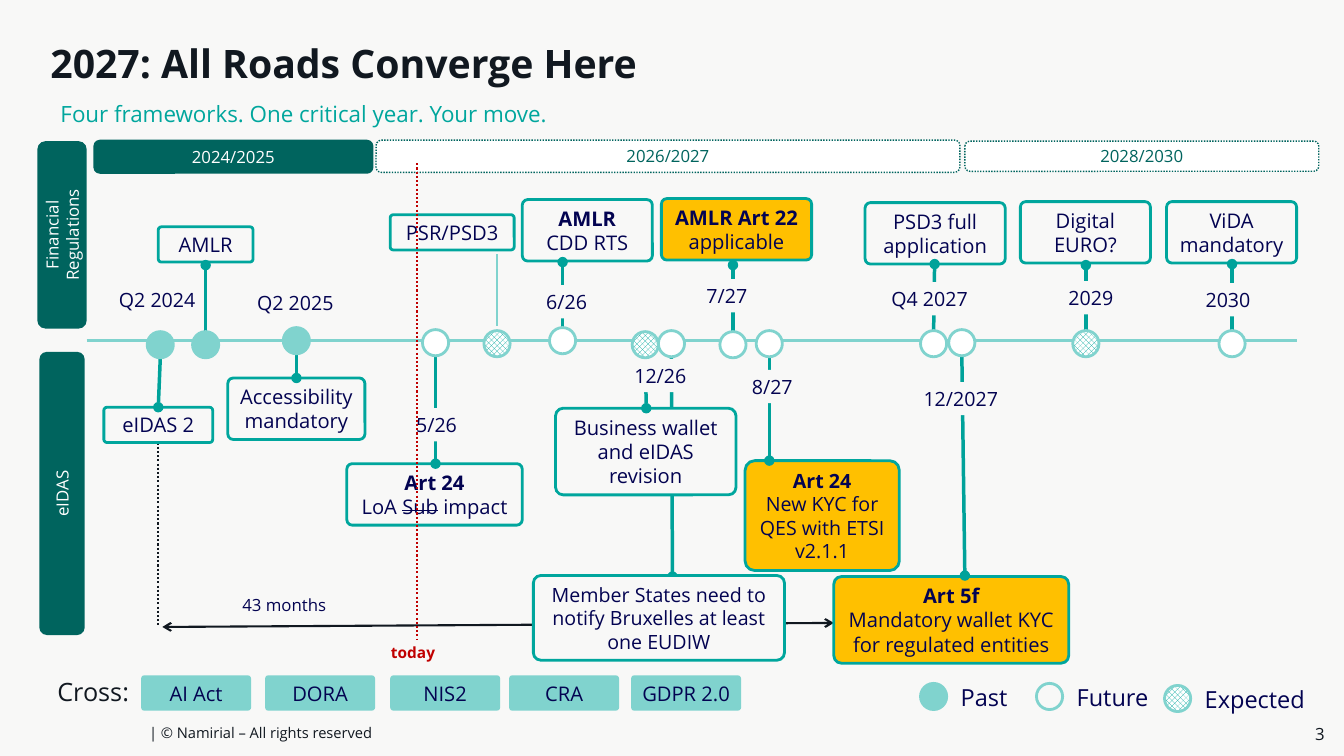
from collections import namedtuple
from dataclasses import dataclass

from lxml import etree
from pptx import Presentation
from pptx import util as u
from pptx.dml.color import RGBColor
from pptx.enum import dml, shapes, text
from pptx.oxml.ns import qn


@dataclass(frozen=True)
class Theme:
    font: str = "Open Sans"
    paper: str = "F8F8F7"
    white: str = "FFFFFF"
    ink: str = "111820"
    navy: str = "030351"
    pine: str = "00645E"
    teal: str = "00A69D"
    stem: str = "00A29A"
    mint: str = "80D3CE"
    amber: str = "FFC000"
    red: str = "C00000"
    title: float = 28
    cross: float = 18
    legend: float = 16.8
    subtitle: float = 16
    card: float = 14.4
    date: float = 14
    band: float = 12
    today: float = 11
    footer: float = 10.5


T = Theme()
Box = namedtuple("Box", "x y w h")
Milestone = namedtuple("Milestone", "dot status end date date_at card lines fill size",
                       defaults=(None, T.card))
ALIGN, ANCHOR = text.PP_ALIGN, text.MSO_ANCHOR
DOT = 0.26
DATE_W, DATE_H = 0.9, 0.33
AXIS_Y = 1.41

NOTIFY = Milestone((5.8, 1.44), "future", (5.81, 3.75), None, None, (4.43, 3.74, 2.49, 0.84),
                   ["Member States need to notify Bruxelles at least one\u00a0EUDIW"], T.paper, T.date)
MILESTONES = [
    Milestone((0.73, 1.45), "past", (0.71, 2.07), "Q2 2024", (0.7, 0.84), (0.17, 2.07, 1.08, 0.35), ["eIDAS 2"]),
    Milestone((1.18, 1.45), "past", (1.18, 0.66), None, None, (0.71, 0.28, 0.94, 0.35), ["AMLR"]),
    Milestone((2.08, 1.41), "past", (2.08, 1.78), "Q2 2025", (2.07, 0.87), (1.4, 1.78, 1.36, 0.61),
              ["Accessibility", "mandatory"]),
    Milestone((3.46, 1.43), "future", (3.46, 2.63), "5/26", (3.47, 2.08), (2.58, 2.63, 1.74, 0.61),
              ["*Art 24", "LoA ~Sub~ impact"]),
    Milestone((4.07, 1.44), "expected", None, None, None, (3.01, 0.16, 1.23, 0.35), ["PSR/PSD3"]),
    Milestone((4.72, 1.41), "future", (4.72, 0.63), "6/26", (4.76, 0.86), (4.32, 0.01, 1.29, 0.61),
              ["*AMLR", "CDD RTS"]),
    Milestone((5.54, 1.45), "expected", (5.55, 2.08), "12/26", (5.69, 1.59), (4.65, 2.08, 1.79, 0.86),
              ["Business wallet and eIDAS revision"], T.paper),
    Milestone((6.41, 1.45), "future", (6.41, 0.66), "7/27", (6.35, 0.8), (5.7, 0, 1.49, 0.61),
              ["*AMLR Art 22", "applicable"], T.amber),
    Milestone((6.77, 1.44), "future", (6.77, 2.6), "8/27", (6.8, 1.7), (6.53, 2.6, 1.53, 1.09),
              ["*Art 24", "New KYC for QES with ETSI v2.1.1"], T.amber, T.date),
    Milestone((8.4, 1.44), "future", (8.41, 0.65), "Q4 2027", (8.36, 0.83), (7.72, 0.04, 1.39, 0.61),
              ["PSD3 full application"]),
    Milestone((8.68, 1.43), "future", (8.71, 3.74), "12/2027", (8.67, 1.82), (7.41, 3.75, 2.33, 0.86),
              ["*Art 5f", "Mandatory wallet KYC for regulated entities"], T.amber),
    Milestone((9.91, 1.44), "expected", (9.91, 0.66), "2029", (9.96, 0.82), (9.26, 0.03, 1.29, 0.61),
              ["Digital EURO?"]),
    Milestone((11.36, 1.44), "future", (11.36, 0.65), "2030", (11.32, 0.84), (10.71, 0.03, 1.29, 0.61),
              ["ViDA", "mandatory"]),
]


def rgb(colour):
    return RGBColor.from_string(colour)


def inches(*lengths):
    return [u.Inches(length) for length in lengths]


def write(frame, lines, size, colour, align=ALIGN.LEFT, anchor=ANCHOR.TOP,
          inset=(0.1, 0.05), bold=False, wrap=True):
    frame.word_wrap = wrap
    frame.auto_size = text.MSO_AUTO_SIZE.NONE
    frame.vertical_anchor = anchor
    frame.margin_left = frame.margin_right = u.Inches(inset[0])
    frame.margin_top = frame.margin_bottom = u.Inches(inset[1])
    for index, line in enumerate(lines):
        paragraph = frame.add_paragraph() if index else frame.paragraphs[0]
        paragraph.alignment = align
        for position, part in enumerate(line.lstrip("*").split("~")):
            run = paragraph.add_run()
            run.text = part
            if position % 2:
                run._r.get_or_add_rPr().set("strike", "sngStrike")
        font = paragraph.font
        font.name, font.size, font.bold = T.font, u.Pt(size), bold or line.startswith("*")
        font.color.rgb = rgb(colour)


def caption(slide, box, wording, size, colour, **style):
    label = slide.shapes.add_textbox(*inches(*box))
    write(label.text_frame, [wording], size, colour, **style)


def panel(slide, box, preset, fill=None, line=None, weight=2.0, dash=None, corner=None):
    body = slide.shapes.add_shape(preset, *inches(*box))
    body.shadow.inherit = False
    if fill:
        body.fill.solid()
        body.fill.fore_color.rgb = rgb(fill)
    else:
        body.fill.background()
    if line:
        body.line.color.rgb = rgb(line)
        body.line.width = u.Pt(weight)
        if dash:
            body.line.dash_style = dash
    else:
        body.line.fill.background()
    if corner:
        body.adjustments[0] = corner
    return body


def rounded(slide, box, lines, size, colour, inset=(0.09, 0.05), **look):
    body = panel(slide, box, shapes.MSO_SHAPE.ROUNDED_RECTANGLE, **look)
    write(body.text_frame, lines, size, colour, ALIGN.CENTER, ANCHOR.MIDDLE, inset)
    return body


def connect(slide, start, end, colour, weight, dash=None, head=None, tail=None):
    link = slide.shapes.add_connector(shapes.MSO_CONNECTOR.STRAIGHT, *inches(*start, *end))
    link.line.color.rgb = rgb(colour)
    link.line.width = u.Pt(weight)
    if dash:
        link.line.dash_style = dash
    for tag, kind in (("a:headEnd", head), ("a:tailEnd", tail)):
        if kind:
            etree.SubElement(link.line._get_or_add_ln(), qn(tag)).set("type", kind)
    etree.SubElement(link._element.spPr, qn("a:effectLst"))


def status_dot(slide, centre, status, open_fill=T.white):
    box = (centre[0] - DOT / 2, centre[1] - DOT / 2, DOT, DOT)
    fill = T.mint if status == "past" else open_fill
    dot = panel(slide, box, shapes.MSO_SHAPE.OVAL, fill, T.mint)
    if status == "expected":
        dot.fill.patterned()
        dot.fill.pattern = dml.MSO_PATTERN.LARGE_CHECKER_BOARD
        dot.fill.fore_color.rgb, dot.fill.back_color.rgb = rgb(T.teal), rgb(T.white)


def heading(slide, box):
    title, subtitle = slide.shapes.title, slide.placeholders[1]
    title.left, title.top, title.width, title.height = inches(box.x, box.y, box.w, 0.48)
    write(title.text_frame, ["2027: All Roads Converge Here"], T.title, T.ink, inset=(0, 0), bold=True)
    subtitle.left, subtitle.top, subtitle.width, subtitle.height = inches(box.x, box.y + 0.55, box.w, 0.4)
    properties = subtitle.text_frame.paragraphs[0]._p.get_or_add_pPr()
    properties.set("marL", "0")
    properties.set("indent", "0")
    etree.SubElement(properties, qn("a:buNone"))
    write(subtitle.text_frame, ["Four frameworks. One critical year. Your move."], T.subtitle, T.teal)
    subtitle.text_frame.paragraphs[0].space_before = u.Pt(0)


def periods(slide, box):
    rounded(slide, (box.x, box.y + 0.01, 2.75, 0.31), ["2024/2025"], T.band, T.white, fill=T.pine, line=T.pine)
    for years, x, w, y, h in (("2026/2027", 2.79, 5.79, 0, 0.32), ("2028/2030", 8.63, 3.51, 0.01, 0.3)):
        rounded(slide, (box.x + x, box.y + y, w, h), [years], T.band, T.pine, fill=T.white,
                line=T.pine, weight=1, dash=dml.MSO_LINE.ROUND_DOT)


def track(slide, box, name):
    middle, centre = box.x + box.w / 2, box.y + box.h / 2
    flat = (middle - box.h / 2, centre - box.w / 2, box.h, box.w)
    rounded(slide, flat, [name], T.band, T.white, inset=(0.1, 0.05), fill=T.pine).rotation = 270


def timeline(slide, box):
    def at(point):
        return box.x + point[0], box.y + point[1]

    def stem(item):
        side = DOT / 2 if item.end[1] > item.dot[1] else -DOT / 2
        connect(slide, at((item.dot[0], item.dot[1] + side)), at(item.end), T.stem, 2.5, tail="oval")

    def card(item):
        rounded(slide, at(item.card) + item.card[2:], item.lines, item.size, T.navy,
                fill=item.fill, line=T.teal, corner=0.088)

    connect(slide, at((0, AXIS_Y)), at((box.w, AXIS_Y)), T.mint, 2.25)
    connect(slide, at((0.71, 2.42)), at((0.71, 4.25)), T.ink, 1.5, dml.MSO_LINE.ROUND_DOT)
    connect(slide, at((0.75, 4.25)), at((7.41, 4.21)), T.ink, 1.5, head="arrow", tail="arrow")
    connect(slide, at((4.07, 1.26)), at((4.07, 0.55)), T.mint, 2)
    caption(slide, at((1.34, 3.88)) + (1.24, 0.3), "43 months", T.band, T.navy, align=ALIGN.CENTER)
    stem(NOTIFY)
    for item in [NOTIFY] + MILESTONES:
        card(item)
    for item in MILESTONES:
        if item.end:
            stem(item)
    for item in MILESTONES:
        if item.date:
            x, y = at(item.date_at)
            date = panel(slide, (x - DATE_W / 2, y, DATE_W, DATE_H), shapes.MSO_SHAPE.RECTANGLE, T.paper)
            write(date.text_frame, [item.date], T.date, T.navy, ALIGN.CENTER, inset=(0.05, 0.05), wrap=False)
    for item in MILESTONES + [NOTIFY]:
        status_dot(slide, at(item.dot), item.status)


def today(slide, box):
    connect(slide, (box.x, box.y), (box.x, box.y + box.h), T.red, 1.5, dml.MSO_LINE.ROUND_DOT)
    caption(slide, (box.x - 0.36, box.y + box.h - 0.02, box.w, 0.29), "today", T.today, T.red, bold=True)


def cross_rules(slide, box):
    caption(slide, (box.x, box.y, 1.12, 0.4), "Cross:", T.cross, T.ink)
    rules = (("AI Act", 0.93), ("DORA", 2.16), ("NIS2", 3.4), ("CRA", 4.58), ("GDPR 2.0", 5.79))
    for rule, x in rules:
        rounded(slide, (box.x + x, box.y + 0.04, 1.09, 0.35), [rule], T.card, T.navy, fill=T.mint, corner=0.088)


def legend(slide, box):
    for status, x, y in (("past", 0, 0), ("future", 1.15, 0), ("expected", 2.42, 0.02)):
        left, top = box.x + x, box.y + y
        status_dot(slide, (left + DOT / 2, top + 0.05 + DOT / 2), status, None)
        caption(slide, (left + 0.3, top, 1.29, 0.38), status.capitalize(), T.legend, T.navy)


def footer(slide, box):
    middle = {"anchor": ANCHOR.MIDDLE, "inset": (0, 0)}
    caption(slide, (box.x, box.y + 0.02, 6.67, 0.2), "| © Namirial – All rights reserved", T.footer, T.ink, **middle)
    caption(slide, (box.x + box.w - 0.77, box.y, 0.77, 0.26), "3", T.band, T.ink, align=ALIGN.RIGHT, **middle)


def main():
    deck = Presentation()
    deck.slide_width, deck.slide_height = inches(13.33, 7.5)
    slide = deck.slides.add_slide(deck.slide_layouts[1])
    slide.background.fill.solid()
    slide.background.fill.fore_color.rgb = rgb(T.paper)
    heading(slide, Box(0.5, 0.39, 12.23, 0.95))
    timeline(slide, Box(0.86, 1.97, 12, 4.61))
    track(slide, Box(0.37, 1.4, 0.49, 1.86), "Financial Regulations")
    track(slide, Box(0.39, 3.49, 0.45, 2.81), "eIDAS")
    periods(slide, Box(0.94, 1.39, 12.14, 0.32))
    today(slide, Box(4.14, 1.62, 0.94, 4.73))
    cross_rules(slide, Box(0.47, 6.66, 6.88, 0.4))
    legend(slide, Box(9.13, 6.73, 4.01, 0.4))
    footer(slide, Box(1.48, 7.15, 11.66, 0.26))
    deck.save("out.pptx")


if __name__ == "__main__":
    main()
